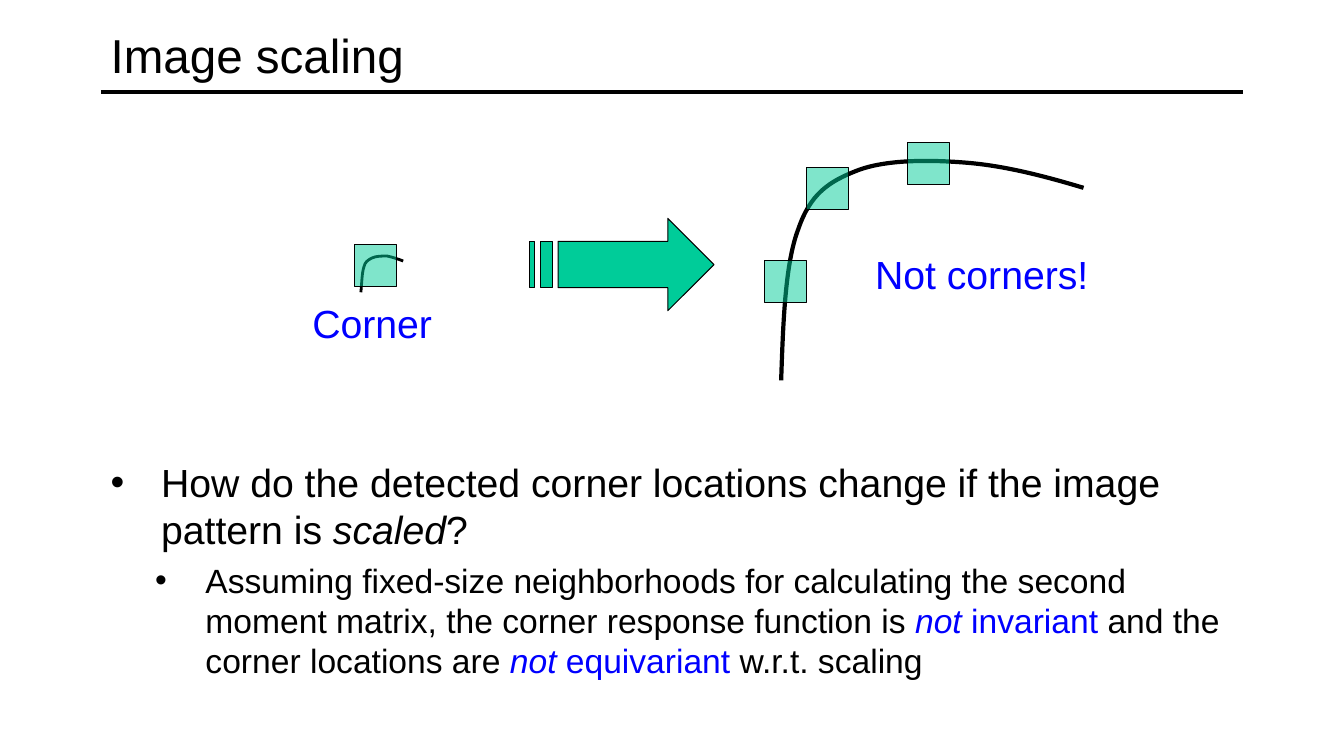
from lxml.etree import SubElement
from pptx import Presentation
from pptx.dml.color import RGBColor
from pptx.enum.shapes import MSO_CONNECTOR, MSO_SHAPE
from pptx.enum.text import MSO_ANCHOR
from pptx.oxml.ns import qn
from pptx.util import Inches, Pt

WIDTH, HEIGHT = 40 / 3, 7.5
MARGIN = 1
CONTENT = WIDTH - 2 * MARGIN
CELL = 1 / 12
BLACK, BLUE, GREEN = "000000", "0000FF", "00CC99"


def color(hex_code):
    """Turn a hex string into a colour."""
    return RGBColor.from_string(hex_code)


def outline(shape, width):
    """Give a shape a black line and no shadow."""
    shape.shadow.inherit = False
    shape.line.color.rgb = color(BLACK)
    shape.line.width = Pt(width)


def fill(shape, hex_code, alpha=None):
    """Fill a shape, optionally with a percentage of opacity."""
    shape.fill.solid()
    shape.fill.fore_color.rgb = color(hex_code)
    if alpha is not None:
        srgb = shape._element.spPr.find(qn("a:solidFill")).find(qn("a:srgbClr"))
        SubElement(srgb, qn("a:alpha")).set("val", str(alpha * 1000))


def text_frame(slide, left, top, width, height, anchor=MSO_ANCHOR.TOP):
    """Add a wrapping text box and return its frame."""
    frame = slide.shapes.add_textbox(*map(Inches, (left, top, width, height))).text_frame
    frame.word_wrap = True
    frame.vertical_anchor = anchor
    return frame


def style(paragraph, size, hex_code=BLACK):
    """Set the font of a whole paragraph."""
    paragraph.font.name = "Arial"
    paragraph.font.size = Pt(size)
    paragraph.font.color.rgb = color(hex_code)


def label(slide, text, box, size=28, hex_code=BLUE, anchor=MSO_ANCHOR.TOP):
    """Write one line of text in a box."""
    paragraph = text_frame(slide, *box, anchor).paragraphs[0]
    paragraph.text = text
    style(paragraph, size, hex_code)


def outlines(slide, left, top, contours, close):
    """Draw contours, measured from a corner, as a single shape."""
    placed = [[(Inches(left + x), Inches(top + y)) for x, y in contour]
              for contour in contours]
    builder = slide.shapes.build_freeform(*placed[0][0])
    for index, (start, *rest) in enumerate(placed):
        if index:
            builder.move_to(*start)
        builder.add_line_segments(rest, close=close)
    return builder.convert_to_shape()


def edge(slide, left, top, points, width):
    """Draw an open image edge, each three points after the first forming a cubic."""
    curve = outlines(slide, left, top, [points], close=False)
    segments = list(curve._element.iter(qn("a:lnTo")))
    for first in range(0, len(segments), 3):
        cubic = SubElement(segments[first].getparent(), qn("a:cubicBezTo"))
        for segment in segments[first:first + 3]:
            cubic.append(segment[0])
            segment.getparent().remove(segment)
    curve.fill.background()
    outline(curve, width)


def neighborhood(slide, left, top, side=5 * CELL):
    """Draw a see-through square window."""
    window = slide.shapes.add_shape(MSO_SHAPE.RECTANGLE, *map(Inches, (left, top, side, side)))
    fill(window, GREEN, 50)
    outline(window, 0.75)


def scaling_arrow(slide, left, top, width, height):
    """Draw a striped arrow whose stripes are counted in 32nds of its width."""
    upper, lower, neck = height / 4, height * 3 / 4, width * 3 / 4
    unit = width / 32
    head = [(neck, 0), (neck, upper), (5 * unit, upper), (5 * unit, lower),
            (neck, lower), (neck, height), (width, height / 2)]
    stripes = [[(a * unit, upper), (a * unit, lower), (b * unit, lower), (b * unit, upper)]
               for a, b in ((2, 4), (0, 1))]
    arrow = outlines(slide, left, top, [head, *stripes], close=True)
    fill(arrow, GREEN)
    outline(arrow, 0.75)


def header(slide, left, top, width, height):
    """Place the title above its rule."""
    rule_y = top + height - CELL
    rule = slide.shapes.add_connector(
        MSO_CONNECTOR.STRAIGHT, *map(Inches, (left, rule_y, left + width, rule_y)))
    rule.line.color.rgb = color(BLACK)
    rule.line.width = Pt(3)
    SubElement(rule._element.spPr, qn("a:effectLst"))
    label(slide, "Image scaling", (left, top, width, height), 34, BLACK, MSO_ANCHOR.MIDDLE)


def small_corner(slide, left, top):
    """Show the small edge, which fits in one window."""
    edge(slide, left + 0.58, top + 0.11,
         [(0, 0.36), (0.01, 0.27), (0.01, 0.17), (0.03, 0.11), (0.04, 0.06), (0.07, 0.04),
          (0.11, 0.02), (0.15, 0), (0.21, 0), (0.26, 0), (0.31, 0.01), (0.37, 0.03),
          (0.42, 0.05)], 2)
    neighborhood(slide, left + 0.52, top)
    label(slide, "Corner", (left, top + 0.49, 1.75, 0.57))


def scaled_corner(slide, left, top):
    """Show the enlarged edge with three windows along it."""
    label(slide, "Not corners!", (left + 1, top + 1.02, 2.83, 0.57))
    edge(slide, left + 2 * CELL, top + 2 * CELL,
         [(0, 2.19), (0.02, 1.61), (0.04, 1.03), (0.17, 0.69), (0.29, 0.34), (0.47, 0.22),
          (0.75, 0.11), (1.03, 0), (1.46, 0), (1.83, 0.03), (2.21, 0.06),
          (2.6, 0.16), (3, 0.28)], 3)
    for column, row in ((17, 0), (5, 3), (0, 14)):
        neighborhood(slide, left + column * CELL, top + row * CELL)


def bullet(paragraph, runs, size, indent):
    """Fill a bulleted paragraph with (text, colour, italic) runs."""
    paragraph.space_before = Pt(size * 0.2)
    properties = paragraph._p.get_or_add_pPr()
    properties.set("marL", str(Inches(indent)))
    properties.set("indent", str(Inches(-0.5)))
    SubElement(properties, qn("a:buFont")).set("typeface", "Arial")
    SubElement(properties, qn("a:buChar")).set("char", "•")
    style(paragraph, size)
    for text, hex_code, italic in runs:
        run = paragraph.add_run()
        run.text = text
        run.font.italic = italic
        run.font.color.rgb = color(hex_code)


def discussion(slide, left, top, width, height):
    """Write the question and its answer."""
    frame = text_frame(slide, left, top, width, height)
    bullet(frame.paragraphs[0], [
        ("How do the detected corner locations change if the image pattern is ", BLACK, False),
        ("scaled", BLACK, True),
        ("?", BLACK, False)], 28, 0.5)
    answer = frame.add_paragraph()
    answer.level = 1
    bullet(answer, [
        ("Assuming fixed-size neighborhoods for calculating the second moment matrix, "
         "the corner response function is ", BLACK, False),
        ("not", BLUE, True),
        (" invariant ", BLUE, False),
        ("and the corner locations are ", BLACK, False),
        ("not ", BLUE, True),
        ("equivariant ", BLUE, False),
        ("w.r.t. scaling", BLACK, False)], 24, 0.94)


def main():
    """Build and save the slide."""
    deck = Presentation()
    deck.slide_width, deck.slide_height = Inches(WIDTH), Inches(HEIGHT)
    slide = deck.slides.add_slide(deck.slide_layouts[6])
    header(slide, MARGIN, CELL, CONTENT, 11 * CELL)
    small_corner(slide, 3, 2.43)
    scaling_arrow(slide, 63 * CELL, 26 * CELL, 22 * CELL, 11 * CELL)
    scaled_corner(slide, 91 * CELL, 17 * CELL)
    discussion(slide, MARGIN, HEIGHT * 0.6, CONTENT, 34 * CELL)
    deck.save("out.pptx")


if __name__ == "__main__":
    main()
